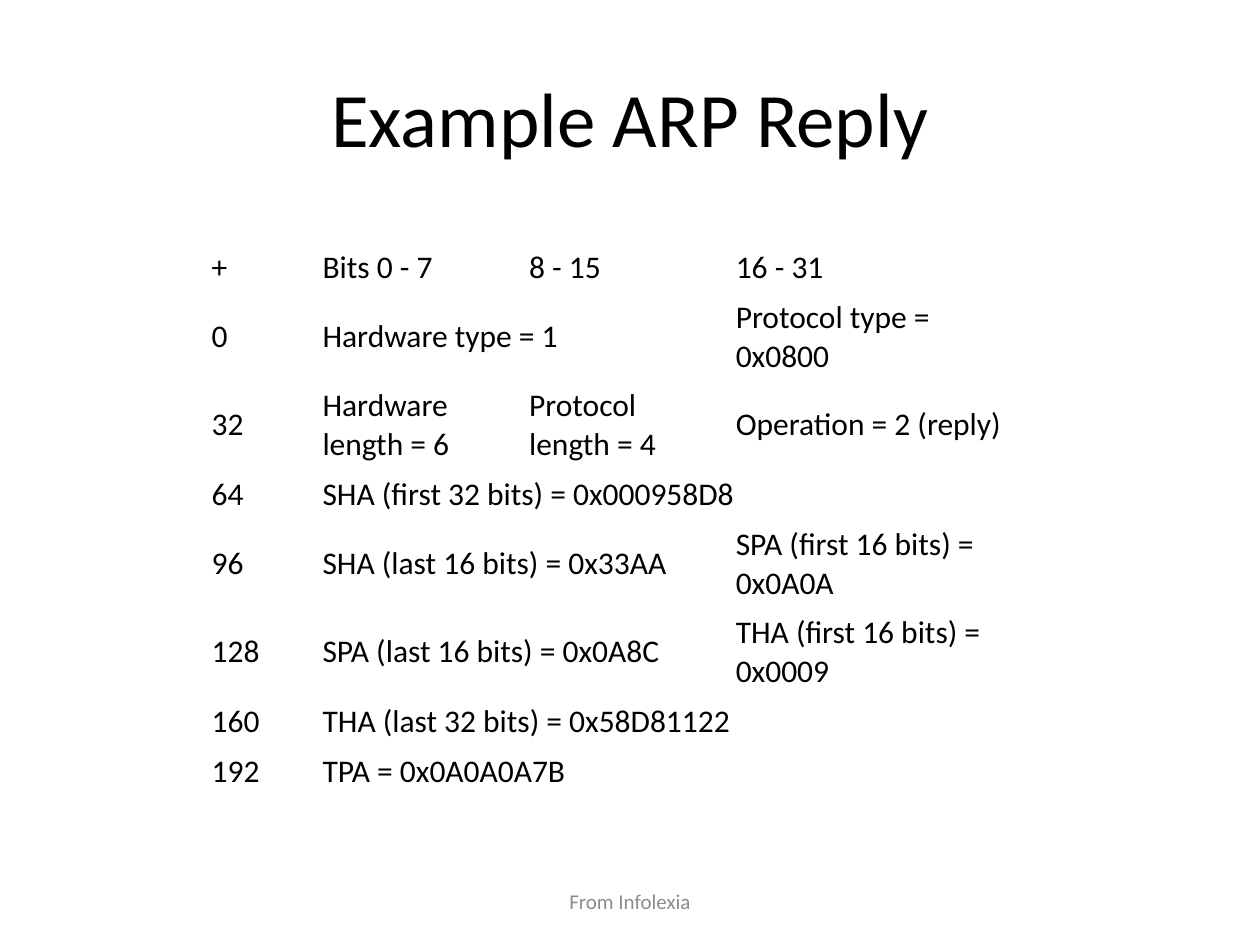
from dataclasses import dataclass

from pptx import Presentation
from pptx.dml.color import RGBColor
from pptx.enum.text import MSO_ANCHOR, PP_ALIGN
from pptx.util import Inches, Pt

# Content: each row is a list of (text, columns spanned)
TITLE = "Example ARP Reply"
FOOTER = "From Infolexia"
ROWS = [
    [("+", 1), ("Bits 0 - 7", 1), ("8 - 15", 1), ("16 - 31", 1)],
    [("0", 1), ("Hardware type = 1", 2), ("Protocol type = 0x0800", 1)],
    [("32", 1), ("Hardware length = 6", 1), ("Protocol length = 4", 1),
     ("Operation = 2 (reply)", 1)],
    [("64", 1), ("SHA (first 32 bits) = 0x000958D8", 3)],
    [("96", 1), ("SHA (last 16 bits) = 0x33AA", 2), ("SPA (first 16 bits) = 0x0A0A", 1)],
    [("128", 1), ("SPA (last 16 bits) = 0x0A8C", 2), ("THA (first 16 bits) = 0x0009", 1)],
    [("160", 1), ("THA (last 32 bits) = 0x58D81122", 3)],
    [("192", 1), ("TPA = 0x0A0A0A7B", 3)],
]


@dataclass(frozen=True)
class Theme:
    font: str = "Calibri"
    ink: RGBColor = RGBColor(0x00, 0x00, 0x00)
    muted: RGBColor = RGBColor(0x8C, 0x8C, 0x8C)
    title: int = 44
    body: int = 18
    footer: int = 12


THEME = Theme()

# Layout in inches
SLIDE_W, SLIDE_H = 10, 7.5
TABLE_LEFT, TABLE_TOP = 1.58, 1.92
COLS = [0.88, 1.64, 1.64, 2.5]
ONE_LINE, TWO_LINES = 0.4, 0.7
TWO_LINE_ROWS = {1, 2, 4, 5}


def style(tf, size, color, align=PP_ALIGN.LEFT):
    for p in tf.paragraphs:
        p.alignment = align
        for r in p.runs:
            r.font.name = THEME.font
            r.font.size = Pt(size)
            r.font.color.rgb = color


def add_centred_text(s, text, top, width, height, size, color):
    left = (SLIDE_W - width) / 2
    tf = s.shapes.add_textbox(*map(Inches, (left, top, width, height))).text_frame
    tf.word_wrap = True
    tf.vertical_anchor = MSO_ANCHOR.MIDDLE
    tf.text = text
    style(tf, size, color, PP_ALIGN.CENTER)


def add_packet_table(s):
    heights = [TWO_LINES if i in TWO_LINE_ROWS else ONE_LINE for i in range(len(ROWS))]
    frame = (TABLE_LEFT, TABLE_TOP, sum(COLS), sum(heights))
    table = s.shapes.add_table(len(ROWS), len(COLS), *map(Inches, frame)).table
    table.first_row = table.horz_banding = False
    for column, width in zip(table.columns, COLS):
        column.width = Inches(width)
    for row, height in zip(table.rows, heights):
        row.height = Inches(height)
        for cell in row.cells:
            cell.fill.background()

    # Fields run left to right, each taking its share of the columns
    for i, fields in enumerate(ROWS):
        col = 0
        for text, span in fields:
            cell = table.cell(i, col)
            if span > 1:
                cell.merge(table.cell(i, col + span - 1))
            cell.vertical_anchor = MSO_ANCHOR.MIDDLE
            cell.text_frame.text = text
            style(cell.text_frame, THEME.body, THEME.ink)
            col += span


def main():
    prs = Presentation()
    prs.slide_width, prs.slide_height = Inches(SLIDE_W), Inches(SLIDE_H)
    s = prs.slides.add_slide(prs.slide_layouts[6])
    add_centred_text(s, TITLE, 0.3, 9, 1.25, THEME.title, THEME.ink)
    add_packet_table(s)
    add_centred_text(s, FOOTER, 6.95, 3.17, 0.4, THEME.footer, THEME.muted)
    prs.save("out.pptx")


if __name__ == "__main__":
    main()
